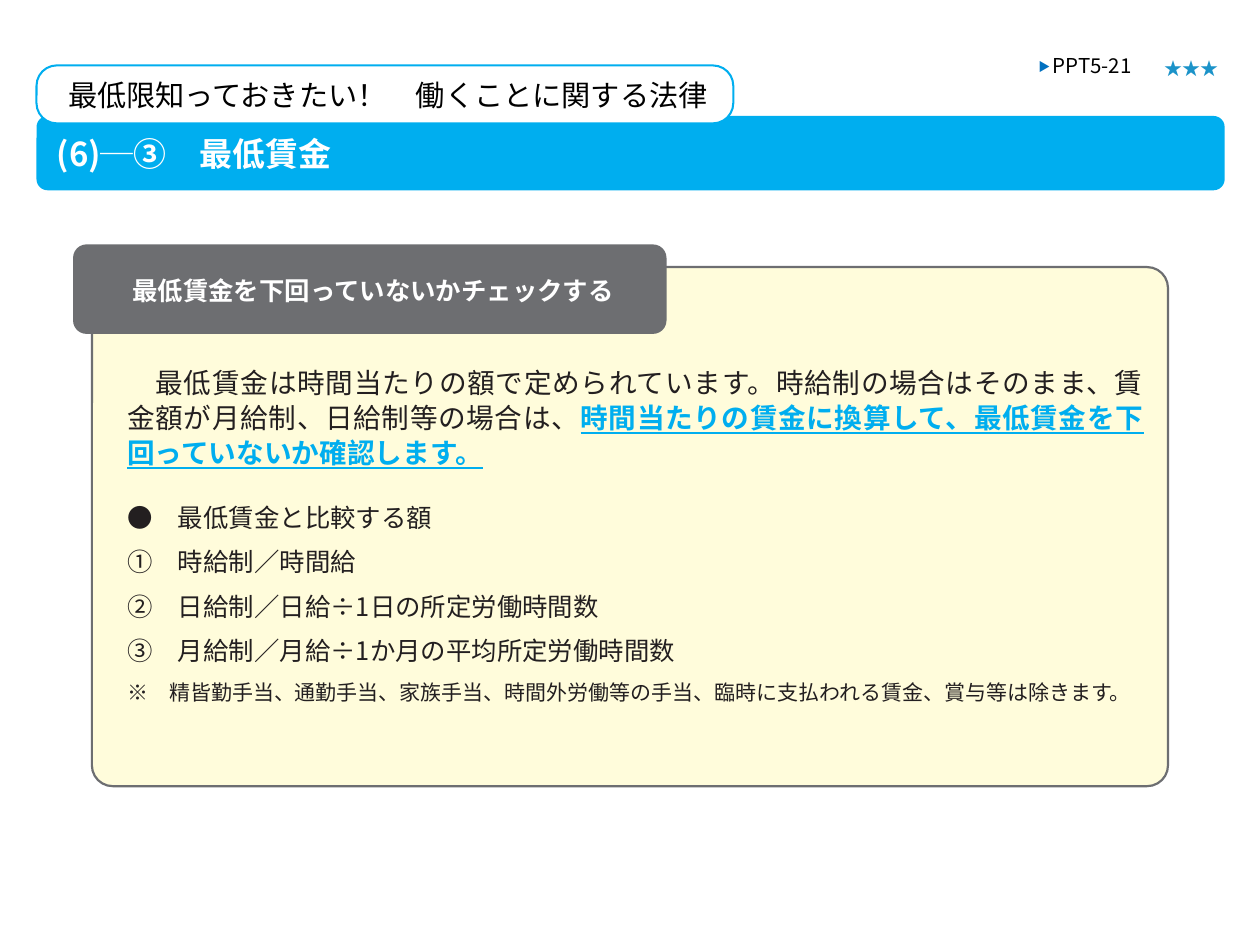
from lxml.etree import SubElement
from pptx import Presentation
from pptx.dml.color import RGBColor
from pptx.enum.shapes import MSO_SHAPE
from pptx.enum.text import MSO_AUTO_SIZE, PP_ALIGN
from pptx.oxml.ns import qn
from pptx.util import Inches, Pt

THEME = {
    "font": "Noto Sans CJK JP",
    "color": {
        "sky": "00AEEF", "gray": "6D6E71", "cream": "FFFCDB", "white": "FFFFFF",
        "black": "000000", "ink": "231F20", "arrow": "0070C0", "star": "1B93C9",
    },
    "size": {
        "title": 18.8, "tab": 16.7, "lead": 15.8, "item": 14.5,
        "note": 12, "page": 11.7, "star": 10.3,
    },
}

# Frames: left, top, width, height in percent of the slide; corner; fill; line; line width
FRAMES = [
    ((7.3, 28.27, 85.4, 54.93), 0.04, "cream", "gray", 1.25),
    ((2.9, 12.27, 94.3, 7.87), 0.15, "sky", None, 0),
    ((5.8, 25.87, 47.1, 9.47), 0.15, "gray", None, 0),
    ((2.9, 6.93, 55.3, 6.13), 0.35, "white", "sky", 1.17),
]

# Single lines: area in percent; size; bold; spans of (text, color, baseline)
LABELS = [
    ((4.5, 13.87, 89.8, 4.4), "title", True, [("(6)─③　最低賃金", "white", 0)]),
    ((10.5, 28.8, 42.4, 3.47), "item", True,
     [("最低賃金を下回っていないかチェックする", "white", 0)]),
    ((5.4, 7.87, 54.6, 4), "tab", False,
     [("最低限知っておきたい！　働くことに関する法律", "black", 0)]),
    ((82.4, 5.33, 9.9, 2.8), "page", False,
     [("▶ ", "arrow", 9000), ("PPT5-21", "black", 0)]),
    ((92.4, 5.87, 5, 2.27), "star", False, [("★★★", "star", 0)]),
]

BODY_AREA = (10.1, 38.4, 80.7, 36.53)
LEAD = "　最低賃金は時間当たりの額で定められています。時給制の場合はそのまま、賃金額が月給制、日給制等の場合は、"
KEY_POINT = "時間当たりの賃金に換算して、最低賃金を下回っていないか確認します。"
# Body lines: text, size, space before
ITEMS = [
    ("●　最低賃金と比較する額", "item", 18.5),
    ("①　時給制／時間給", "item", 8),
    ("②　日給制／日給÷1日の所定労働時間数", "item", 8),
    ("③　月給制／月給÷1か月の平均所定労働時間数", "item", 8),
    ("※　精皆勤手当、通勤手当、家族手当、時間外労働等の手当、臨時に支払われる賃金、賞与等は除きます。", "note", 8.2),
]

deck = Presentation()
deck.slide_width, deck.slide_height = Inches(10), Inches(7.5)
page = deck.slides.add_slide(deck.slide_layouts[6])


def place(area):
    sides = (deck.slide_width, deck.slide_height) * 2
    return [round(side * share / 100) for side, share in zip(sides, area)]


def color(name):
    return RGBColor.from_string(THEME["color"][name])


def add_frame(area, corner, fill, line, width):
    frame = page.shapes.add_shape(MSO_SHAPE.ROUNDED_RECTANGLE, *place(area))
    frame.adjustments[0] = corner
    frame.shadow.inherit = False
    frame.fill.solid()
    frame.fill.fore_color.rgb = color(fill)
    if line:
        frame.line.color.rgb = color(line)
        frame.line.width = Pt(width)
    else:
        frame.line.fill.background()


def add_box(area, top_inset):
    box = page.shapes.add_textbox(*place(area)).text_frame
    box.word_wrap = True
    box.auto_size = MSO_AUTO_SIZE.SHAPE_TO_FIT_TEXT
    box.margin_left = box.margin_right = box.margin_bottom = 0
    box.margin_top = Inches(top_inset)
    return box


def style(para, size, before, bold=False):
    para.space_before = Pt(before)
    para.font.name = THEME["font"]
    para.font.size = Pt(THEME["size"][size])
    para.font.bold = bold
    # East Asian characters take their own typeface entry
    properties = para.font.fill._xPr
    SubElement(properties, qn("a:ea"), typeface=THEME["font"])


def add_span(para, text, tint):
    span = para.add_run()
    span.text = text
    span.font.color.rgb = color(tint)
    return span


# Panel, title bar, heading plate and tab
for frame in FRAMES:
    add_frame(*frame)

# Single-line texts
for area, size, bold, spans in LABELS:
    para = add_box(area, 0.02).paragraphs[0]
    style(para, size, 1.1, bold)
    for text, tint, baseline in spans:
        span = add_span(para, text, tint)
        if baseline:
            span.font._element.set("baseline", str(baseline))

# Lead paragraph with its key point
body = add_box(BODY_AREA, 0.01)
lead = body.paragraphs[0]
style(lead, "lead", 0.8)
lead.alignment = PP_ALIGN.JUSTIFY
lead.line_spacing = 1.06
add_span(lead, LEAD, "ink")
key_point = add_span(lead, KEY_POINT, "sky")
key_point.font.bold = key_point.font.underline = True

# Amounts to compare
for text, size, before in ITEMS:
    para = body.add_paragraph()
    style(para, size, before)
    para.alignment = PP_ALIGN.JUSTIFY
    add_span(para, text, "ink")

deck.save("out.pptx")
